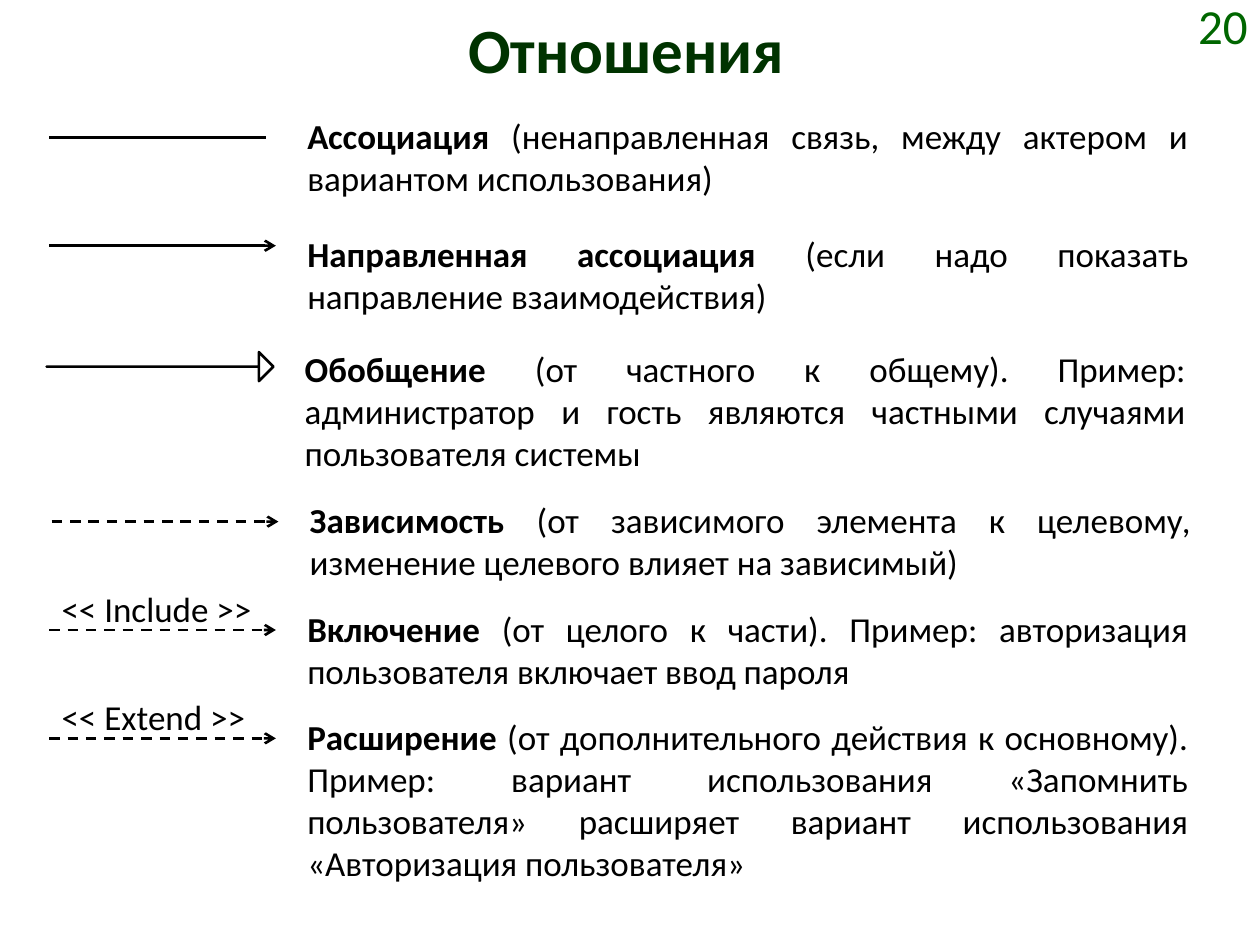
"""Build a slide that explains the relations of a use case diagram."""
from dataclasses import dataclass

from lxml.etree import SubElement
from pptx import Presentation
from pptx.dml.color import RGBColor
from pptx.enum.dml import MSO_LINE
from pptx.enum.shapes import MSO_CONNECTOR, MSO_SHAPE
from pptx.enum.text import MSO_ANCHOR, MSO_AUTO_SIZE, PP_ALIGN
from pptx.oxml.ns import qn
from pptx.util import Inches, Pt


@dataclass(frozen=True)
class Theme:
    font: str = "Calibri"
    title: RGBColor = RGBColor(0x00, 0x33, 0x00)
    number: RGBColor = RGBColor(0x00, 0x66, 0x00)
    ink: RGBColor = RGBColor(0, 0, 0)
    paper: RGBColor = RGBColor(0xFF, 0xFF, 0xFF)
    title_size: int = 36
    number_size: int = 28
    body_size: int = 20
    line_width: float = 1.5


@dataclass(frozen=True)
class Relation:
    term: str
    meaning: str
    text_top: float
    line_y: float
    text_height: float = 0.77
    style: str = "arrow"
    label: str = ""
    shift: float = 0


THEME = Theme()
SYMBOL_LEFT, SYMBOL_WIDTH = 0.39, 1.8
PLAIN_WIDTH = 1.72
TEXT_LEFT, TEXT_WIDTH = 2.34, 7.19
HEAD_HEIGHT = 0.23
LABEL_RISE, LABEL_HEIGHT = 0.39, 0.44

TITLE = "Отношения"
NUMBER = "20"
RELATIONS = [
    Relation("Ассоциация", " (ненаправленная связь, между актером и вариантом использования)",
             0.86, 1.09, style="plain"),
    Relation("Направленная ассоциация ", "(если надо показать направление взаимодействия)",
             1.8, 1.95),
    Relation("Обобщение", " (от частного к общему). Пример: администратор и гость "
             "являются частными случаями пользователя системы",
             2.71, 2.91, 1.11, style="general", shift=-0.02),
    Relation("Зависимость", " (от зависимого элемента к целевому, изменение целевого "
             "влияет на зависимый)", 3.91, 4.14, style="dashed", shift=0.02),
    Relation("Включение", " (от целого к части). Пример: авторизация пользователя "
             "включает ввод пароля", 4.77, 5, style="dashed", label="<< Include >>"),
    Relation("Расширение", " (от дополнительного действия к основному). Пример: вариант "
             "использования «Запомнить пользователя» расширяет вариант использования "
             "«Авторизация пользователя»",
             5.63, 5.86, 1.45, style="dashed", label="<< Extend >>"),
]


def style_para(para, size, color, align):
    para.alignment = align
    para.font.name = THEME.font
    para.font.size = Pt(size)
    para.font.color.rgb = color


def add_body(page, left, top, width, height, spans):
    box = page.shapes.add_textbox(*map(Inches, (left, top, width, height)))
    frame = box.text_frame
    frame.word_wrap = True
    frame.auto_size = MSO_AUTO_SIZE.SHAPE_TO_FIT_TEXT
    para = frame.paragraphs[0]
    style_para(para, THEME.body_size, THEME.ink, PP_ALIGN.JUSTIFY)
    para.space_before = Pt(12)
    for text, bold in spans:
        span = para.add_run()
        span.text = text
        span.font.bold = bold


def style_line(line):
    line.color.rgb = THEME.ink
    line.width = Pt(THEME.line_width)


def add_generalization(page, left, y):
    arrow = page.shapes.add_shape(
        MSO_SHAPE.RIGHT_ARROW, Inches(left), Inches(y - HEAD_HEIGHT / 2),
        Inches(SYMBOL_WIDTH), Inches(HEAD_HEIGHT))
    arrow.adjustments[0] = 0
    arrow.adjustments[1] = 0.5
    arrow.shadow.inherit = False
    arrow.fill.solid()
    arrow.fill.fore_color.rgb = THEME.paper
    style_line(arrow.line)


def add_line(page, left, y, style):
    width = PLAIN_WIDTH if style == "plain" else SYMBOL_WIDTH
    connector = page.shapes.add_connector(
        MSO_CONNECTOR.STRAIGHT, *map(Inches, (left, y, left + width, y)))
    style_line(connector.line)
    if style == "dashed":
        connector.line.dash_style = MSO_LINE.DASH
    if style != "plain":
        SubElement(connector.line._get_or_add_ln(), qn("a:tailEnd"), type="arrow")
    SubElement(connector._element.spPr, qn("a:effectLst"))


def add_relation(page, relation):
    left = SYMBOL_LEFT + relation.shift
    add_body(page, TEXT_LEFT + relation.shift, relation.text_top, TEXT_WIDTH,
             relation.text_height, [(relation.term, True), (relation.meaning, False)])
    if relation.style == "general":
        add_generalization(page, left, relation.line_y)
    else:
        add_line(page, left, relation.line_y, relation.style)
    if relation.label:
        add_body(page, left, relation.line_y - LABEL_RISE, SYMBOL_WIDTH, LABEL_HEIGHT,
                 [(relation.label, False)])


def add_title(page):
    title = page.shapes.title
    title.left, title.top, title.width, title.height = map(Inches, (0.47, 0, 9, 0.94))
    frame = title.text_frame
    frame.text = TITLE
    frame.vertical_anchor = MSO_ANCHOR.TOP
    frame.margin_top = Inches(0.08)
    para = frame.paragraphs[0]
    style_para(para, THEME.title_size, THEME.title, PP_ALIGN.CENTER)
    para.font.bold = True


def add_number(page):
    box = page.shapes.add_textbox(*map(Inches, (8.98, 0, 1.02, 0.39)))
    frame = box.text_frame
    frame.word_wrap = True
    frame.vertical_anchor = MSO_ANCHOR.MIDDLE
    frame.text = NUMBER
    style_para(frame.paragraphs[0], THEME.number_size, THEME.number, PP_ALIGN.RIGHT)


def main():
    deck = Presentation()
    deck.slide_width, deck.slide_height = Inches(10), Inches(7.5)
    page = deck.slides.add_slide(deck.slide_layouts.get_by_name("Title Only"))
    add_title(page)
    add_number(page)
    for relation in RELATIONS:
        add_relation(page, relation)
    deck.save("out.pptx")


if __name__ == "__main__":
    main()
